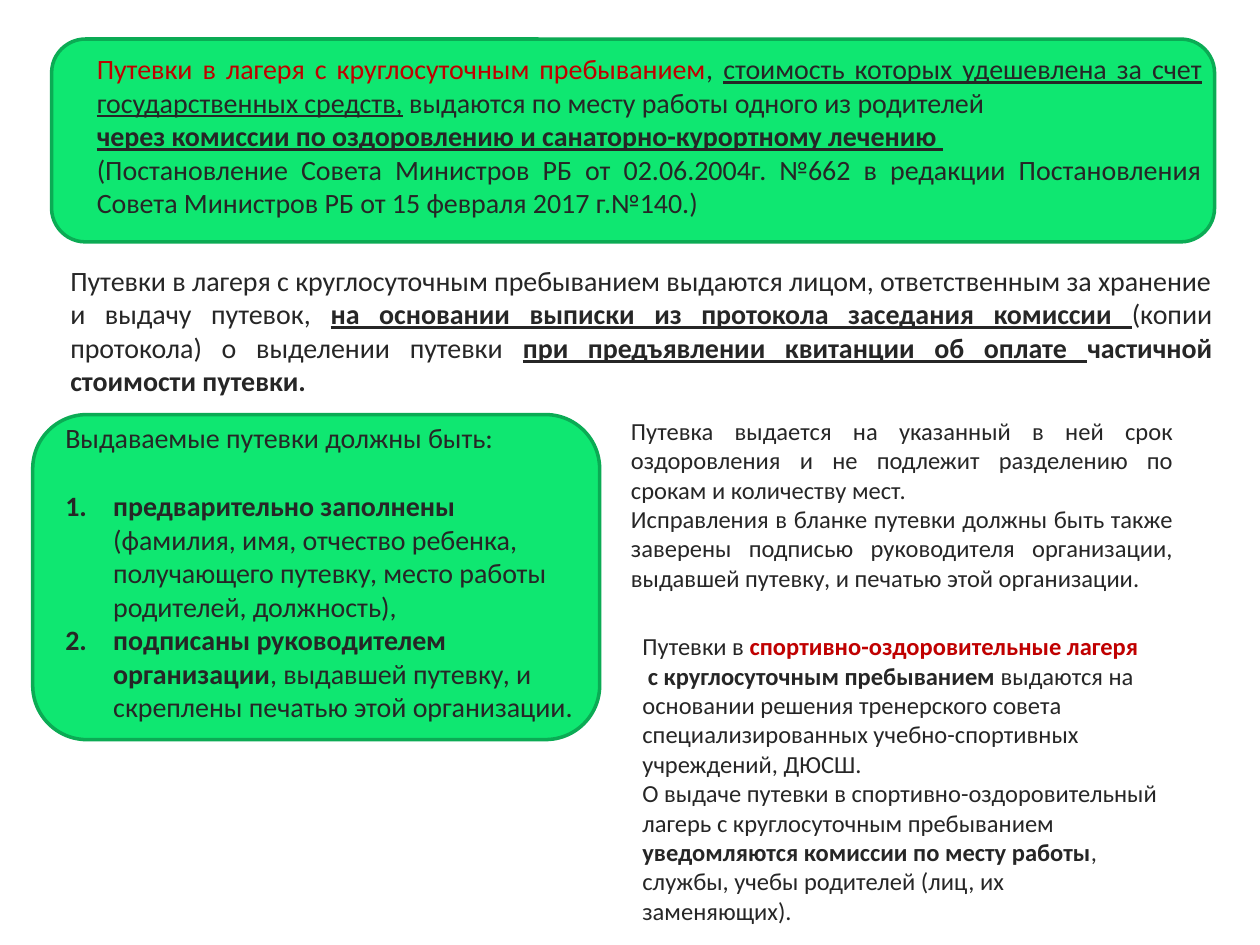
"""Build the slide on issuing vouchers to round-the-clock children's camps."""
from dataclasses import dataclass

from lxml.etree import SubElement
from pptx import Presentation
from pptx.dml.color import RGBColor
from pptx.enum.shapes import MSO_SHAPE as SHAPE
from pptx.enum.text import MSO_AUTO_SIZE as AUTO, PP_ALIGN as ALIGN
from pptx.oxml.ns import qn
from pptx.util import Inches, Pt


@dataclass(frozen=True)
class Theme:
    font: str = "Calibri"
    text: RGBColor = RGBColor(0x26, 0x26, 0x26)
    accent: RGBColor = RGBColor(0xC0, 0x00, 0x00)
    panel: RGBColor = RGBColor(0x0F, 0xE7, 0x71)
    border: RGBColor = RGBColor(0x0B, 0xAB, 0x54)
    border_width: Pt = Pt(2)
    large: Pt = Pt(16)
    small: Pt = Pt(14)


THEME = Theme()
BOLD = {"bold": True}
UNDER = {"underline": True}
KEY = {**BOLD, **UNDER}


@dataclass(frozen=True)
class Box:
    left: float
    top: float
    width: float
    height: float

    def lengths(self) -> list:
        return [Inches(v) for v in (self.left, self.top, self.width, self.height)]


@dataclass(frozen=True)
class Span:
    text: str
    fmt: dict | None = None
    color: RGBColor = THEME.text


@dataclass(frozen=True)
class Para:
    spans: tuple[Span, ...]
    align: ALIGN = ALIGN.JUSTIFY
    numbered: bool = False
    before: float = 0


@dataclass(frozen=True)
class TextBlock:
    box: Box
    size: Pt
    paras: tuple[Para, ...]


PANELS = (Box(0.26, 3.29, 4.5, 2.58), Box(0.41, 0.31, 9.23, 1.61))

SPORT_CAMPS = TextBlock(Box(5, 4.96, 4.29, 2.46), THEME.small, (
    Para((Span("Путевки в "),
          Span("спортивно-оздоровительные лагеря", BOLD, THEME.accent)), ALIGN.LEFT),
    Para((Span(" с круглосуточным пребыванием ", BOLD),
          Span("выдаются на основании решения тренерского совета "
               "специализированных учебно-спортивных учреждений, ДЮСШ.")), ALIGN.LEFT),
    Para((Span("О выдаче путевки в спортивно-оздоровительный лагерь "
               "с круглосуточным пребыванием "),
          Span("уведомляются комиссии по месту работы", BOLD),
          Span(", службы, учебы родителей (лиц, их заменяющих).")), ALIGN.LEFT),
))

REQUIREMENTS = TextBlock(Box(0.42, 3.29, 4.25, 2.52), THEME.large, (
    Para((Span("Выдаваемые путевки должны быть:"),)),
    Para((Span("предварительно заполнены ", BOLD),
          Span("(фамилия, имя, отчество ребенка, получающего путевку, "
               "место работы родителей, должность),")),
         ALIGN.LEFT, numbered=True, before=19.5),
    Para((Span("подписаны руководителем организации", BOLD),
          Span(", выдавшей путевку, и скреплены печатью этой организации.")),
         ALIGN.LEFT, numbered=True),
))

SUBSIDISED = TextBlock(Box(0.67, 0.36, 8.97, 1.45), THEME.large, (
    Para((Span("Путевки в лагеря с круглосуточным пребыванием", color=THEME.accent),
          Span(", "),
          Span("стоимость которых удешевлена за счет государственных средств,", UNDER),
          Span(" выдаются по месту работы одного из родителей"))),
    Para((Span("через комиссии по оздоровлению и санаторно-курортному лечению ", KEY),)),
    Para((Span("(Постановление Совета Министров РБ от 02.06.2004г. №662 в редакции "
               "Постановления Совета Министров РБ от 15 февраля 2017 г.№140.) "),)),
))

VALIDITY = TextBlock(Box(4.91, 3.25, 4.5, 1.51), THEME.small, (
    Para((Span("Путевка выдается на указанный в ней срок оздоровления и не подлежит "
               "разделению по срокам и количеству мест."),)),
    Para((Span("Исправления в бланке путевки должны быть также заверены подписью "
               "руководителя организации, выдавшей путевку, и печатью этой организации."),)),
))

ISSUING = TextBlock(Box(0.46, 2.04, 9.26, 1.18), THEME.large, (
    Para((Span("Путевки в лагеря с круглосуточным пребыванием выдаются лицом, "
               "ответственным за хранение и выдачу путевок, "),
          Span("на основании выписки из протокола заседания комиссии ", KEY),
          Span("(копии протокола) о выделении путевки "),
          Span("при предъявлении квитанции об оплате ", KEY),
          Span("частичной стоимости путевки.", BOLD))),
))

BLOCKS = (SPORT_CAMPS, REQUIREMENTS, SUBSIDISED, VALIDITY, ISSUING)


def set_attrs(target, values: dict) -> None:
    for name, value in values.items():
        setattr(target, name, value)


def add_panel(s, box: Box) -> None:
    sp = s.shapes.add_shape(SHAPE.ROUNDED_RECTANGLE, *box.lengths())
    sp.shadow.inherit = False
    sp.fill.solid()
    sp.fill.fore_color.rgb = THEME.panel
    sp.line.color.rgb = THEME.border
    sp.line.width = THEME.border_width


def add_number(p) -> None:
    pPr = p._p.get_or_add_pPr()
    pPr.set("marL", str(Inches(0.38)))
    pPr.set("indent", str(-Inches(0.38)))
    SubElement(pPr, qn("a:buFont"), typeface="+mj-lt")
    SubElement(pPr, qn("a:buAutoNum"), type="arabicPeriod")


def fill_para(p, para: Para, size: Pt) -> None:
    p.alignment = para.align
    if para.numbered:
        add_number(p)
    if para.before:
        p.space_before = Pt(para.before)
    for span in para.spans:
        r = p.add_run()
        r.text = span.text
        set_attrs(r.font, {"name": THEME.font, "size": size, **(span.fmt or {})})
        r.font.color.rgb = span.color


def add_text(s, block: TextBlock) -> None:
    tf = s.shapes.add_textbox(*block.box.lengths()).text_frame
    set_attrs(tf, {"word_wrap": True, "auto_size": AUTO.SHAPE_TO_FIT_TEXT})
    for i, para in enumerate(block.paras):
        p = tf.add_paragraph() if i else tf.paragraphs[0]
        fill_para(p, para, block.size)


def main() -> None:
    prs = Presentation()
    set_attrs(prs, {"slide_width": Inches(10), "slide_height": Inches(7.5)})
    s = prs.slides.add_slide(prs.slide_layouts[6])
    for box in PANELS:
        add_panel(s, box)
    for block in BLOCKS:
        add_text(s, block)
    prs.save("out.pptx")


if __name__ == "__main__":
    main()
